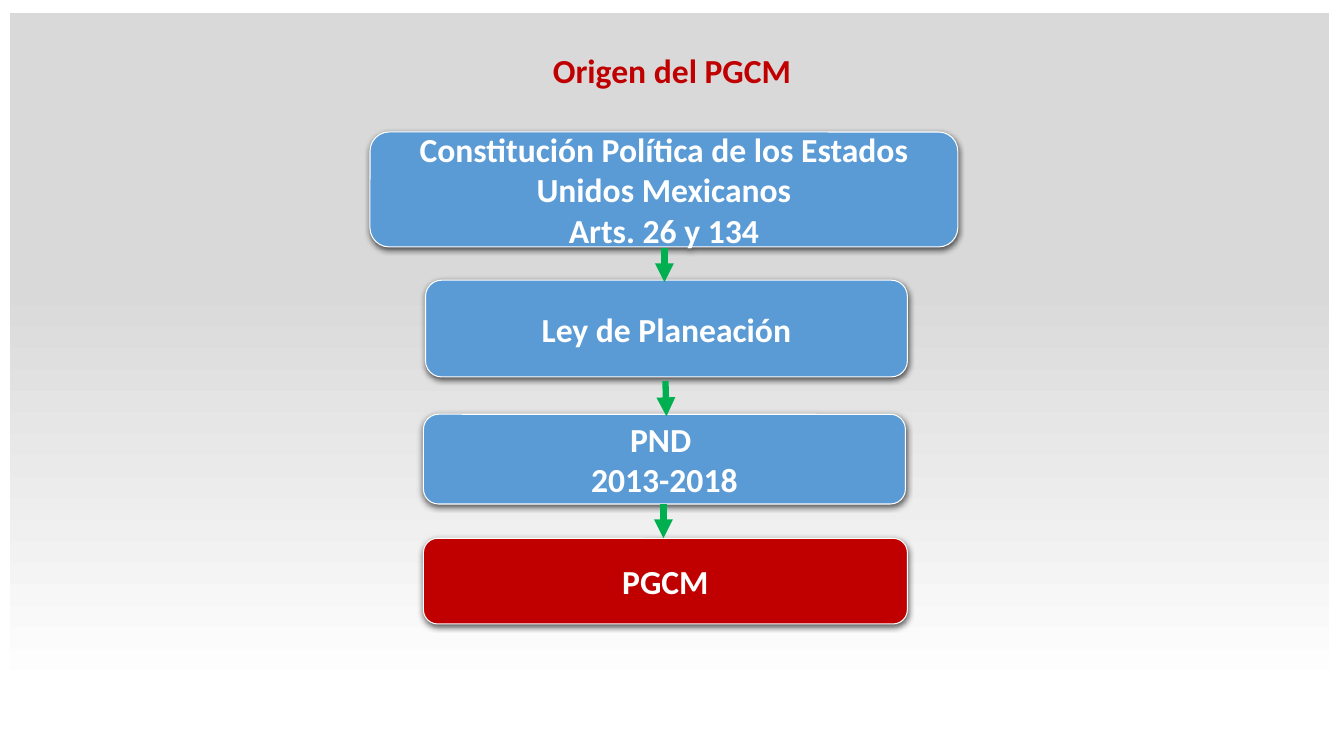
from lxml import etree
from pptx import Presentation
from pptx.dml.color import RGBColor
from pptx.enum import shapes, text
from pptx.oxml import ns
from pptx.util import Inches, Pt

RED = RGBColor(0xC0, 0x00, 0x00)
BLUE = RGBColor(0x5B, 0x9B, 0xD5)
GREEN = RGBColor(0x00, 0xB0, 0x50)
GRAY = RGBColor(0xD9, 0xD9, 0xD9)
WHITE = RGBColor(0xFF, 0xFF, 0xFF)


def format_text(text_frame, color):
    text_frame.word_wrap = True
    text_frame.vertical_anchor = text.MSO_ANCHOR.MIDDLE
    for paragraph in text_frame.paragraphs:
        paragraph.alignment = text.PP_ALIGN.CENTER
        for run in paragraph.runs:
            run.font.name = "Calibri"
            run.font.size = Pt(24)
            run.font.bold = True
            run.font.color.rgb = color


def add_effect(parent, tag, **attributes):
    element = etree.SubElement(parent, ns.qn(tag))
    for name, value in attributes.items():
        element.set(name, str(value))
    return element


presentation = Presentation()
presentation.slide_width = Inches(13.33)
presentation.slide_height = Inches(7.5)
slide = presentation.slides.add_slide(presentation.slide_layouts[5])

title = slide.shapes.title
title.left, title.top = Inches(0), Inches(0.27)
title.width, title.height = Inches(13.33), Inches(0.91)
title.text_frame.text = "Origen del PGCM"
title.text_frame.paragraphs[0].line_spacing = 0.9
format_text(title.text_frame, RED)

backdrop = slide.shapes.add_shape(
    shapes.MSO_SHAPE.RECTANGLE, Inches(0.1), Inches(0.13), Inches(13.08), Inches(7.24))
backdrop.shadow.inherit = False
backdrop.line.fill.background()
backdrop.fill.gradient()
backdrop.fill.gradient_angle = 270
for stop, position, color in zip(backdrop.fill.gradient_stops, (0.37, 0.93), (GRAY, WHITE)):
    stop.position = position
    stop.color.rgb = color
title.element.addprevious(backdrop.element)

boxes = [
    ("Constitución Política de los Estados Unidos Mexicanos\nArts. 26 y 134",
     3.67, 1.31, 5.83, 1.14, BLUE),
    ("Ley de Planeación", 4.22, 2.78, 4.78, 0.96, BLUE),
    ("PND \n2013-2018", 4.2, 4.11, 4.78, 0.89, BLUE),
    ("PGCM", 4.2, 5.34, 4.8, 0.85, RED),
]
for label, left, top, width, height, color in boxes:
    box = slide.shapes.add_shape(
        shapes.MSO_SHAPE.ROUNDED_RECTANGLE,
        Inches(left), Inches(top), Inches(width), Inches(height))
    box.fill.solid()
    box.fill.fore_color.rgb = color
    box.line.color.rgb = WHITE
    box.line.width = Pt(0.75)
    box.text_frame.text = label
    format_text(box.text_frame, WHITE)
    box.shadow.inherit = False
    effects = box.element.spPr.find(ns.qn("a:effectLst"))
    shadow = add_effect(effects, "a:outerShdw", blurRad=Pt(4.5), dist=Pt(1.5),
                        dir=5400000, algn="ctr", rotWithShape=0)
    shadow_color = add_effect(shadow, "a:srgbClr", val="000000")
    add_effect(shadow_color, "a:alpha", val=63000)

arrows = [(6.59, 2.46, 6.59, 2.8), (6.6, 3.78, 6.61, 4.13), (6.58, 5, 6.58, 5.34)]
for ends in arrows:
    arrow = slide.shapes.add_connector(
        shapes.MSO_CONNECTOR.STRAIGHT, *[Inches(end) for end in ends])
    arrow.line.color.rgb = GREEN
    arrow.line.width = Pt(4.5)
    properties = arrow.element.spPr
    add_effect(properties.find(ns.qn("a:ln")), "a:tailEnd", type="triangle")
    add_effect(properties, "a:effectLst")

presentation.save("out.pptx")
